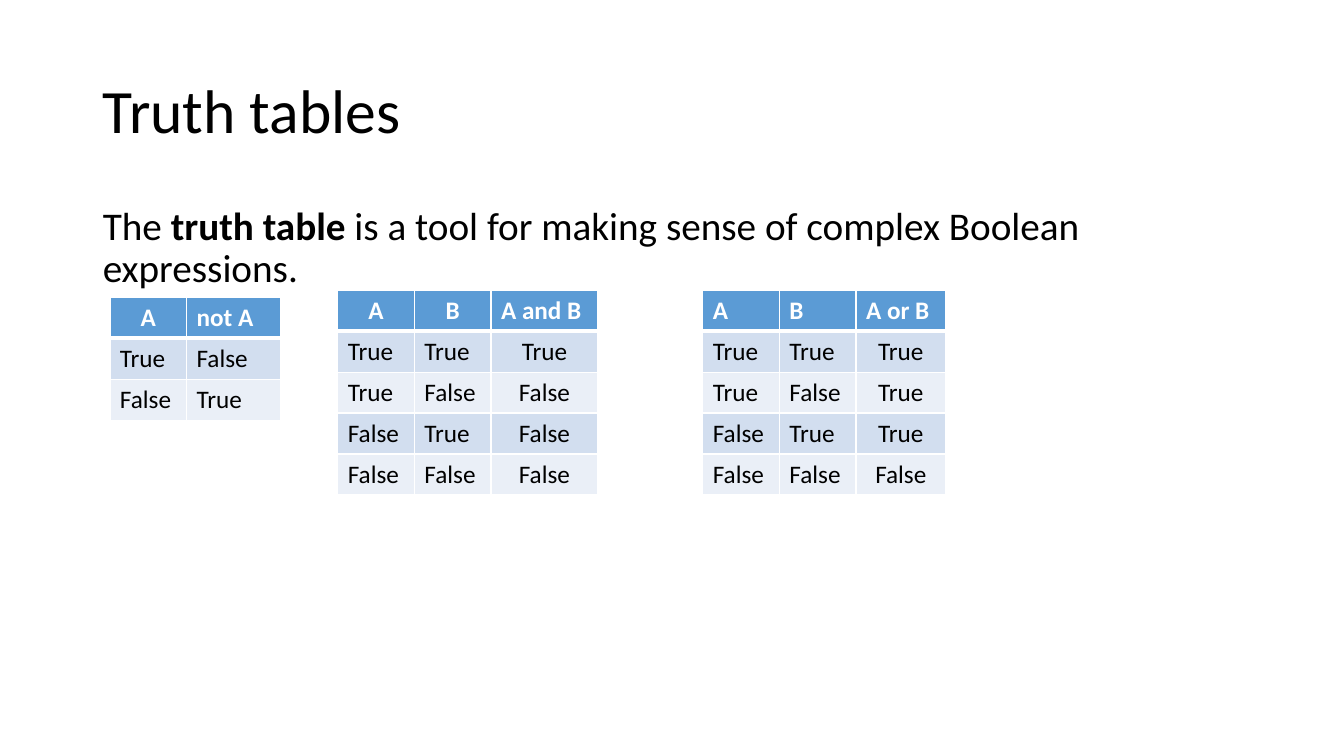
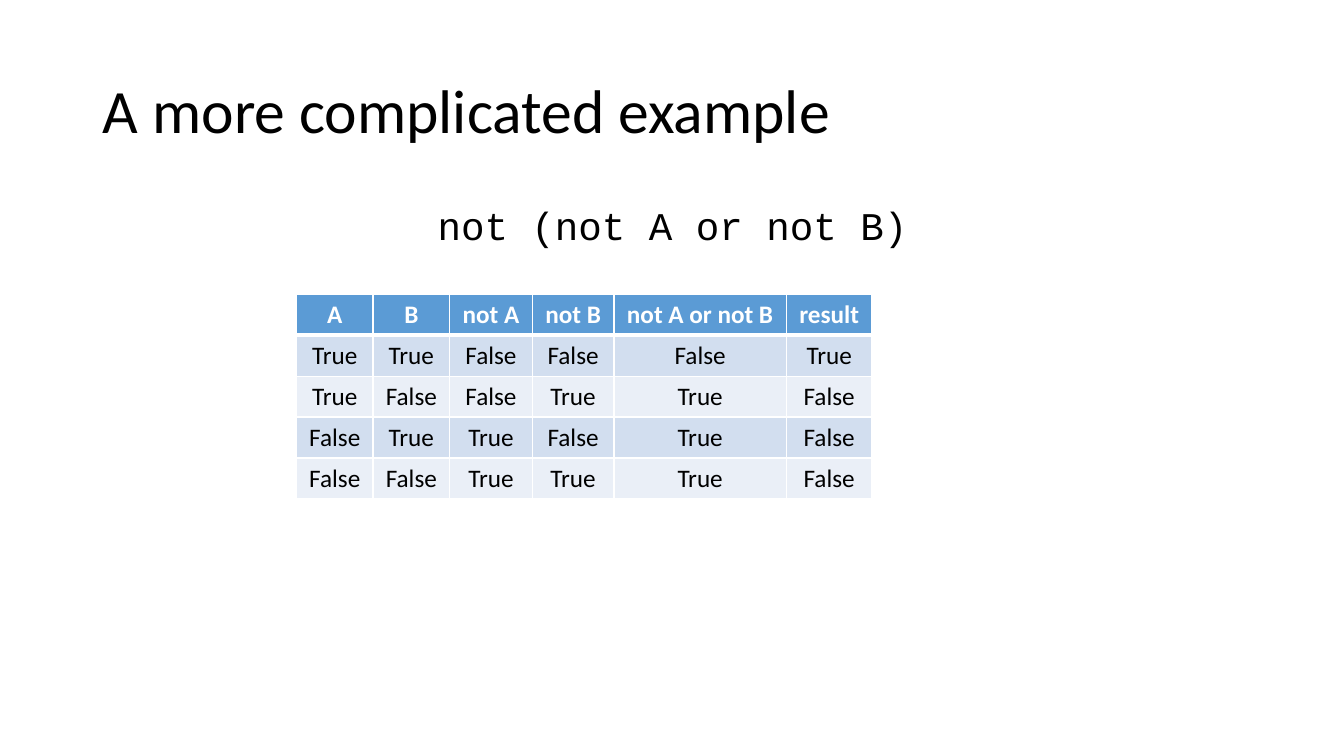
from itertools import product

from lxml import etree
from pptx import Presentation
from pptx.dml.color import RGBColor
from pptx.enum import text
from pptx.oxml.ns import qn
from pptx.util import Inches, Pt

# Shared style
COLORS = {"text": "000000", "white": "FFFFFF", "header": "5B9BD5",
          "odd": "D2DEEF", "even": "EAEFF7"}
FONT, CODE_FONT = "Calibri", "Courier New"
ALIGN = {"l": text.PP_ALIGN.LEFT, "c": text.PP_ALIGN.CENTER}
TITLE_BOX = (0.92, 0.4, 11.5, 1.45)
BODY_BOX = (0.92, 2, 11.5, 4.76)
ROW_HEIGHT = 2.03 / 5
NARROW = 0.76  # column of a plain variable


def rgb(name):
    return RGBColor.from_string(COLORS[name])


def style_run(r, size, color="text", font=FONT, bold=False):
    r.font.size, r.font.name, r.font.bold = Pt(size), font, bold
    r.font.color.rgb = rgb(color)


def fill_placeholder(sp, box, parts, size, align="l", font=FONT,
                     anchor=text.MSO_ANCHOR.TOP, before=0):
    """Write (text, bold) parts as one paragraph without a bullet."""
    sp.left, sp.top, sp.width, sp.height = map(Inches, box)
    tf = sp.text_frame
    tf.word_wrap = True
    tf.auto_size = text.MSO_AUTO_SIZE.NONE
    tf.vertical_anchor = anchor
    p = tf.paragraphs[0]
    p.alignment, p.line_spacing, p.space_before = ALIGN[align], 0.9, Pt(before)
    pPr = p._p.get_or_add_pPr()
    pPr.set("marL", "0")
    pPr.set("indent", "0")
    etree.SubElement(pPr, qn("a:buNone"))
    for words, bold in parts:
        r = p.add_run()
        r.text = words
        style_run(r, size, font=font, bold=bold)


def add_slide(prs, title, parts, **body_style):
    s = prs.slides.add_slide(prs.slide_layouts[1])
    fill_placeholder(s.shapes.title, TITLE_BOX, [(title, False)], 44,
                     anchor=text.MSO_ANCHOR.MIDDLE)
    fill_placeholder(s.placeholders[1], BODY_BOX, parts, 28, before=10,
                     **body_style)
    return s


def set_borders(cell, top, bottom):
    tcPr = cell._tc.get_or_add_tcPr()
    widths = {"lnL": 1, "lnR": 1, "lnT": top, "lnB": bottom}
    for i, (side, width) in enumerate(widths.items()):
        ln = etree.Element(qn(f"a:{side}"), w=str(Pt(width)))
        fill = etree.SubElement(ln, qn("a:solidFill"))
        etree.SubElement(fill, qn("a:srgbClr"), val=COLORS["white"])
        tcPr.insert(i, ln)


def truth_rows(variables, *columns):
    """List every input combination, followed by the computed columns."""
    for values in product((True, False), repeat=variables):
        yield [str(v) for v in (*values, *(f(*values) for f in columns))]


def add_truth_table(s, left, top, widths, headers, rows, head_align, body_align):
    grid = [headers, *rows]
    table = s.shapes.add_table(
        len(grid), len(widths), Inches(left), Inches(top),
        Inches(sum(widths)), Inches(ROW_HEIGHT * len(grid))).table
    for col, width in zip(table.columns, widths):
        col.width = Inches(width)
    for i, values in enumerate(grid):
        head = i == 0
        table.rows[i].height = Inches(ROW_HEIGHT)
        band = "header" if head else "odd" if i % 2 else "even"
        for j, value in enumerate(values):
            cell = table.cell(i, j)
            cell.fill.solid()
            cell.fill.fore_color.rgb = rgb(band)
            # The heavy rule lies between header and first row
            set_borders(cell, top=3 if i == 1 else 1, bottom=3 if head else 1)
            p = cell.text_frame.paragraphs[0]
            p.text = value
            p.alignment = ALIGN[(head_align if head else body_align)[j]]
            style_run(p.runs[0], 18, "white" if head else "text", bold=head)


def main():
    prs = Presentation()
    prs.slide_width, prs.slide_height = Inches(13.33), Inches(7.5)

    # Basic operators
    s = add_slide(prs, "Truth tables", [
        ("The ", False), ("truth table", True),
        (" is a tool for making sense of complex Boolean expressions.", False)])
    add_truth_table(s, 1.09, 2.95, [NARROW, 0.93], ["A", "not A"],
                    truth_rows(1, lambda a: not a), "cl", "ll")
    add_truth_table(s, 3.35, 2.88, [NARROW, NARROW, 1.06], ["A", "B", "A and B"],
                    truth_rows(2, lambda a, b: a and b), "ccl", "llc")
    add_truth_table(s, 6.97, 2.88, [NARROW, NARROW, 0.89], ["A", "B", "A or B"],
                    truth_rows(2, lambda a, b: a or b), "lll", "llc")

    # Compound expression
    s = add_slide(prs, "A more complicated example",
                  [("not (not A or not B)", False)], align="c", font=CODE_FONT)
    rows = truth_rows(2, lambda a, b: not a, lambda a, b: not b,
                      lambda a, b: not a or not b,
                      lambda a, b: not (not a or not b))
    add_truth_table(s, 2.94, 2.92, [NARROW, NARROW, 0.82, 0.81, 1.71, 0.85],
                    ["A", "B", "not A", "not B", "not A or not B", "result"],
                    rows, "cccccc", "cccccc")

    prs.save("out.pptx")


if __name__ == "__main__":
    main()
